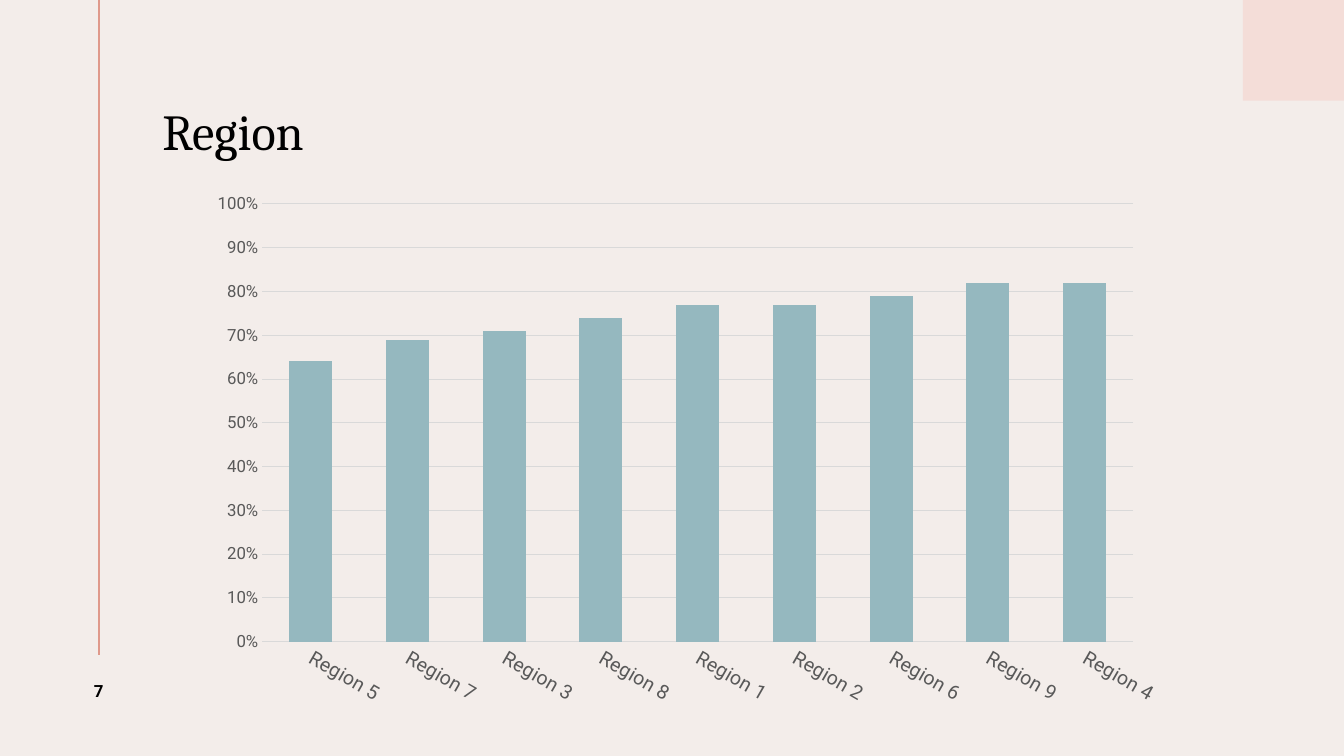
"""Build a slide with a column chart of nine regions."""
from dataclasses import dataclass

import lxml.etree
import pptx
import pptx.chart.data
import pptx.dml.color
import pptx.enum.chart
import pptx.enum.shapes
import pptx.enum.text
import pptx.oxml.ns
import pptx.util

Cm = pptx.util.Cm
Pt = pptx.util.Pt
qn = pptx.oxml.ns.qn
ALIGN = pptx.enum.text.PP_ALIGN

COLORS = {
    "background": "F3EDEA",
    "corner": "F4DDD8",
    "rule": "DF998B",
    "text": "000000",
    "labels": "595959",
    "grid": "D9D9D9",
    "bars": "95B8BF",
}
SHARES = {
    "Region 5": 0.64,
    "Region 7": 0.69,
    "Region 3": 0.71,
    "Region 8": 0.74,
    "Region 1": 0.77,
    "Region 2": 0.77,
    "Region 6": 0.79,
    "Region 9": 0.82,
    "Region 4": 0.82,
}
PLOT_LAYOUT = {
    "layoutTarget": "inner",
    "xMode": "edge",
    "yMode": "edge",
    "x": "0.06",
    "y": "0.04",
    "w": "0.89",
    "h": "0.82",
}


@dataclass
class Label:
    text: str
    left: float
    top: float
    width: float
    height: float
    font: str
    size: int
    bold: bool = False
    align: ALIGN = ALIGN.LEFT
    inset: float = 0.25
    spacing: float = 1.0


LABELS = [
    Label("Region", 4.09, 1.4, 27.25, 3.96, "Cambria", 36, inset=0, spacing=0.9),
    Label("7", 1.14, 16.51, 2.69, 1.8, "Roboto", 12, bold=True, align=ALIGN.CENTER),
]


def rgb(name: str) -> pptx.dml.color.RGBColor:
    return pptx.dml.color.RGBColor.from_string(COLORS[name])


def style_font(font, name: str, size: int, color: str, bold: bool = False) -> None:
    font.name = name
    font.size = Pt(size)
    font.bold = bold
    font.color.rgb = rgb(color)


def style_line(line, color: str, width: float) -> None:
    line.color.rgb = rgb(color)
    line.width = Pt(width)


def add_label(slide, label: Label) -> None:
    sp = slide.shapes.add_textbox(
        Cm(label.left), Cm(label.top), Cm(label.width), Cm(label.height)
    )
    tf = sp.text_frame
    tf.word_wrap = True
    tf.vertical_anchor = pptx.enum.text.MSO_ANCHOR.MIDDLE
    tf.margin_left = Cm(label.inset)
    p = tf.paragraphs[0]
    p.alignment = label.align
    p.line_spacing = label.spacing
    r = p.add_run()
    r.text = label.text
    style_font(r.font, label.font, label.size, "text", label.bold)


def add_decoration(slide) -> None:
    sp = slide.shapes.add_shape(
        pptx.enum.shapes.MSO_SHAPE.RECTANGLE, Cm(31.32), 0, Cm(2.55), Cm(2.54)
    )
    sp.shadow.inherit = False
    sp.fill.solid()
    sp.fill.fore_color.rgb = rgb("corner")
    sp.line.fill.background()
    rule = slide.shapes.add_connector(
        pptx.enum.shapes.MSO_CONNECTOR.STRAIGHT, Cm(2.49), 0, Cm(2.49), Cm(16.51)
    )
    style_line(rule.line, "rule", 1.5)
    lxml.etree.SubElement(rule._element.spPr, qn("a:effectLst"))


def style_axis(axis, size: int) -> None:
    axis.major_tick_mark = pptx.enum.chart.XL_TICK_MARK.NONE
    axis.minor_tick_mark = pptx.enum.chart.XL_TICK_MARK.NONE
    style_font(axis.tick_labels.font, "Roboto", size, "labels")


def fix_plot_area(chart) -> None:
    area = chart._chartSpace.chart.plotArea
    for old in area.findall(qn("c:layout")):
        area.remove(old)
    layout = lxml.etree.Element(qn("c:layout"))
    manual = lxml.etree.SubElement(layout, qn("c:manualLayout"))
    for tag, value in PLOT_LAYOUT.items():
        lxml.etree.SubElement(manual, qn(f"c:{tag}")).set("val", value)
    area.insert(0, layout)


def add_region_chart(slide) -> None:
    data = pptx.chart.data.CategoryChartData(number_format="0%")
    data.categories = list(SHARES)
    data.add_series("Series 1", list(SHARES.values()))
    chart = slide.shapes.add_chart(
        pptx.enum.chart.XL_CHART_TYPE.COLUMN_CLUSTERED,
        Cm(5.13), Cm(4.6), Cm(24.66), Cm(13.46), data,
    ).chart
    chart.has_title = False
    chart.has_legend = False
    style_font(chart.font, "Roboto", 10, "text")

    plot = chart.plots[0]
    plot.gap_width = 125
    plot.vary_by_categories = False
    fill = plot.series[0].format.fill
    fill.solid()
    fill.fore_color.rgb = rgb("bars")

    regions = chart.category_axis
    style_axis(regions, 14)
    style_line(regions.format.line, "grid", 0.75)
    regions._element.txPr.find(qn("a:bodyPr")).set("rot", "1800000")

    shares = chart.value_axis
    style_axis(shares, 12)
    shares.minimum_scale = 0
    shares.maximum_scale = 1
    shares.major_unit = 0.1
    shares.tick_labels.number_format = "0%"
    shares.tick_labels.number_format_is_linked = False
    shares.format.line.fill.background()
    style_line(shares.major_gridlines.format.line, "grid", 0.75)
    fix_plot_area(chart)


def main() -> None:
    prs = pptx.Presentation()
    prs.slide_width = Cm(33.87)
    prs.slide_height = Cm(19.05)
    s = prs.slides.add_slide(prs.slide_layouts[6])
    s.background.fill.solid()
    s.background.fill.fore_color.rgb = rgb("background")
    add_decoration(s)
    for label in LABELS:
        add_label(s, label)
    add_region_chart(s)
    prs.save("out.pptx")


if __name__ == "__main__":
    main()
